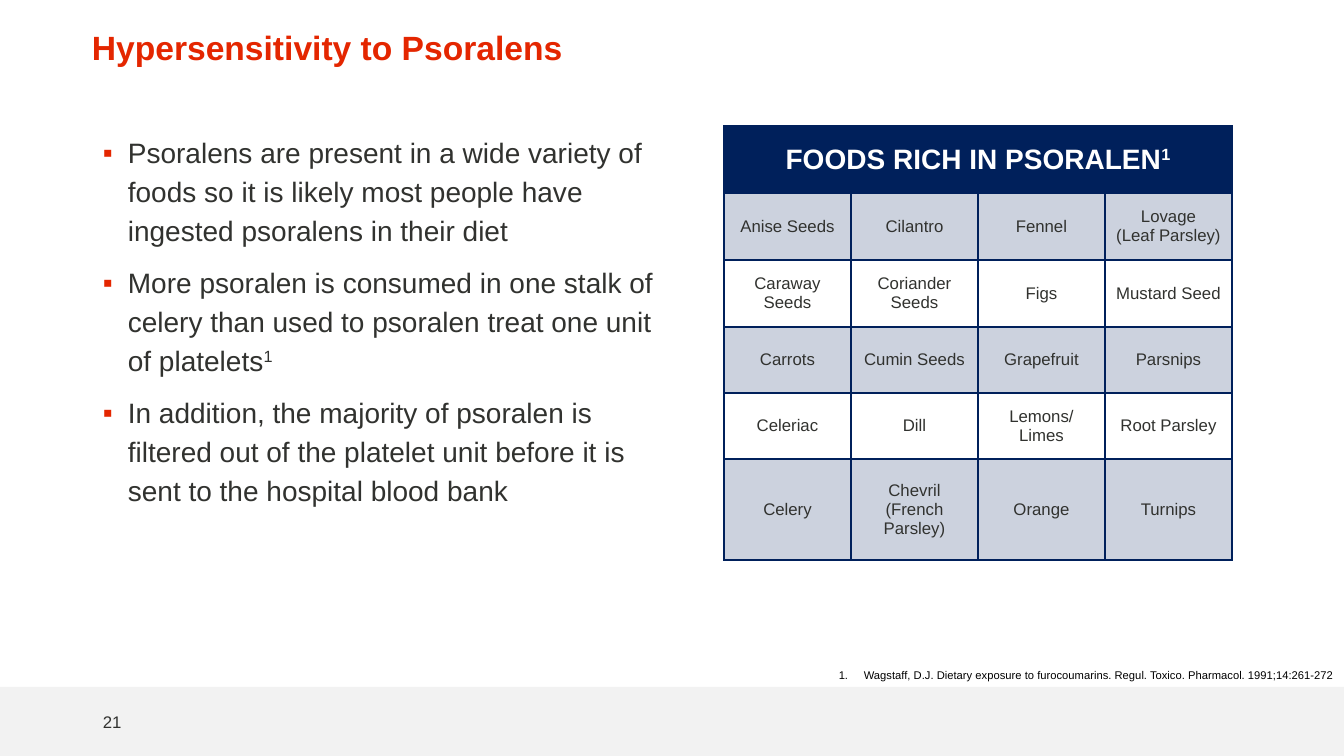
from lxml import etree
from pptx import Presentation
from pptx.dml.color import RGBColor
from pptx.enum.shapes import MSO_SHAPE
from pptx.enum.text import MSO_ANCHOR, PP_ALIGN
from pptx.oxml.ns import qn
from pptx.util import Pt

RECTANGLE = MSO_SHAPE.RECTANGLE
TOP, MIDDLE = MSO_ANCHOR.TOP, MSO_ANCHOR.MIDDLE
LEFT, CENTER, RIGHT = PP_ALIGN.LEFT, PP_ALIGN.CENTER, PP_ALIGN.RIGHT

FONT = "Arial"
RED, NAVY, INK = "E42600", "00205B", "31322F"
WHITE, BLACK, GREY = "FFFFFF", "000000", "F2F2F2"
PX_PER_INCH = 100.8
INDENT = 25

POINTS = [
    [("Psoralens are present in a wide variety of foods so it is likely most "
      "people have ingested psoralens in their diet", 0)],
    [("More psoralen is consumed in one stalk of celery than used to psoralen "
      "treat one unit of platelets", 0), ("1", 30)],
    [("In addition, the majority of psoralen is filtered out of the platelet "
      "unit before it is sent to the hospital blood bank", 0)],
]
FOODS = [
    ["Anise Seeds", "Cilantro", "Fennel", "Lovage\n(Leaf Parsley)"],
    ["Caraway Seeds", "Coriander Seeds", "Figs", "Mustard Seed"],
    ["Carrots", "Cumin Seeds", "Grapefruit", "Parsnips"],
    ["Celeriac", "Dill", "Lemons/\nLimes", "Root Parsley"],
    ["Celery", "Chevril\n(French Parsley)", "Orange", "Turnips"],
]
ROW_HEIGHTS = [67, 67, 67, 66, 66, 101]


def px(length):
    return round(length * 914400 / PX_PER_INCH)


def color(code):
    return RGBColor.from_string(code)


def add_spans(para, spans, size, ink, bold=False):
    for text, raised in spans:
        span = para.add_run()
        span.text = text
        formats = {"name": FONT, "size": Pt(size), "bold": bold}
        for name, value in formats.items():
            setattr(span.font, name, value)
        span.font.color.rgb = color(ink)
        if raised:
            span.font._element.set("baseline", str(raised * 1000))


def add_bullet(para, tag, settings, ink):
    props = para._p.get_or_add_pPr()
    props.set("marL", str(px(INDENT)))
    props.set("indent", str(-px(INDENT)))
    tint = etree.SubElement(props, qn("a:buClr"))
    etree.SubElement(tint, qn("a:srgbClr"), val=ink)
    etree.SubElement(props, qn("a:buFont"), typeface=FONT)
    etree.SubElement(props, qn(tag), settings)


def add_box(page, box, anchor):
    frame = page.shapes.add_textbox(*map(px, box)).text_frame
    frame.word_wrap = True
    frame.vertical_anchor = anchor
    return frame


def add_footer(page, box):
    left, top, width, height = box
    band = page.shapes.add_shape(RECTANGLE, *map(px, box))
    band.shadow.inherit = False
    band.fill.solid()
    band.fill.fore_color.rgb = color(GREY)
    band.line.fill.background()
    number = add_box(page, (left + 93, top + 15, 50, 40), MIDDLE)
    add_spans(number.paragraphs[0], [("21", 0)], 12, INK)


def add_title(page, box):
    para = add_box(page, box, MIDDLE).paragraphs[0]
    para.line_spacing = 0.9
    add_spans(para, [("Hypersensitivity to Psoralens", 0)], 24, RED, True)


def add_points(page, box):
    frame = add_box(page, box, TOP)
    for index, spans in enumerate(POINTS):
        para = frame.add_paragraph() if index else frame.paragraphs[0]
        add_bullet(para, "a:buChar", {"char": "▪"}, RED)
        para.line_spacing = 1.15
        if index:
            para.space_before = Pt(10)
        add_spans(para, spans, 20, INK)


def add_borders(cell, bottom_width):
    props = cell._tc.get_or_add_tcPr()
    sides = {"a:lnL": 1, "a:lnR": 1, "a:lnT": 1, "a:lnB": bottom_width}
    for index, (tag, width) in enumerate(sides.items()):
        line = etree.Element(qn(tag), w=str(Pt(width)))
        fill = etree.SubElement(line, qn("a:solidFill"))
        etree.SubElement(fill, qn("a:srgbClr"), val=NAVY)
        props.insert(index, line)


def fill_cell(cell, fill, opacity, bottom_width):
    formats = {"vertical_anchor": MIDDLE, "margin_left": px(10),
               "margin_right": px(10), "margin_top": 0, "margin_bottom": 0}
    for name, value in formats.items():
        setattr(cell, name, value)
    if fill:
        cell.fill.solid()
        cell.fill.fore_color.rgb = color(fill)
        tint = cell._tc.tcPr.find(".//" + qn("a:srgbClr"))
        etree.SubElement(tint, qn("a:alpha"), val=str(opacity * 1000))
    else:
        cell.fill.background()
    add_borders(cell, bottom_width)


def add_foods(page, box):
    columns = len(FOODS[0])
    table = page.shapes.add_table(len(ROW_HEIGHTS), columns, *map(px, box)).table
    table.first_row = table.horz_banding = False
    for column in table.columns:
        column.width = px(box[2] / columns)
    for row, height in zip(table.rows, ROW_HEIGHTS):
        row.height = px(height)

    header = table.cell(0, 0)
    header.merge(table.cell(0, columns - 1))
    for column in range(columns):
        fill_cell(table.cell(0, column), NAVY, 100, 2)
    para = header.text_frame.paragraphs[0]
    para.alignment = CENTER
    add_spans(para, [("FOODS RICH IN PSORALEN", 0), ("1", 30)], 20, WHITE, True)

    for row, foods in enumerate(FOODS, 1):
        for column, food in enumerate(foods):
            cell = table.cell(row, column)
            fill_cell(cell, NAVY if row % 2 else None, 20, 1)
            frame = cell.text_frame
            for index, text in enumerate(food.split("\n")):
                para = frame.add_paragraph() if index else frame.paragraphs[0]
                para.alignment = CENTER
                add_spans(para, [(text, 0)], 12, INK)


def add_reference(page, box):
    para = add_box(page, box, TOP).paragraphs[0]
    add_bullet(para, "a:buAutoNum", {"type": "arabicPeriod"}, BLACK)
    para.alignment = RIGHT
    add_spans(para, [("Wagstaff, D.J. Dietary exposure to furocoumarins. "
                      "Regul. Toxico. Pharmacol. 1991;14:261-272", 0)], 8, BLACK)


def main():
    deck = Presentation()
    deck.slide_width, deck.slide_height = px(1344), px(756)
    page = deck.slides.add_slide(deck.slide_layouts[6])
    add_footer(page, (0, 687, 1344, 69))
    add_title(page, (82, 12, 1252, 76))
    add_points(page, (93, 126, 594, 554))
    add_foods(page, (724, 126, 508, sum(ROW_HEIGHTS)))
    add_reference(page, (294, 663, 1050, 24))
    deck.save("out.pptx")


if __name__ == "__main__":
    main()
